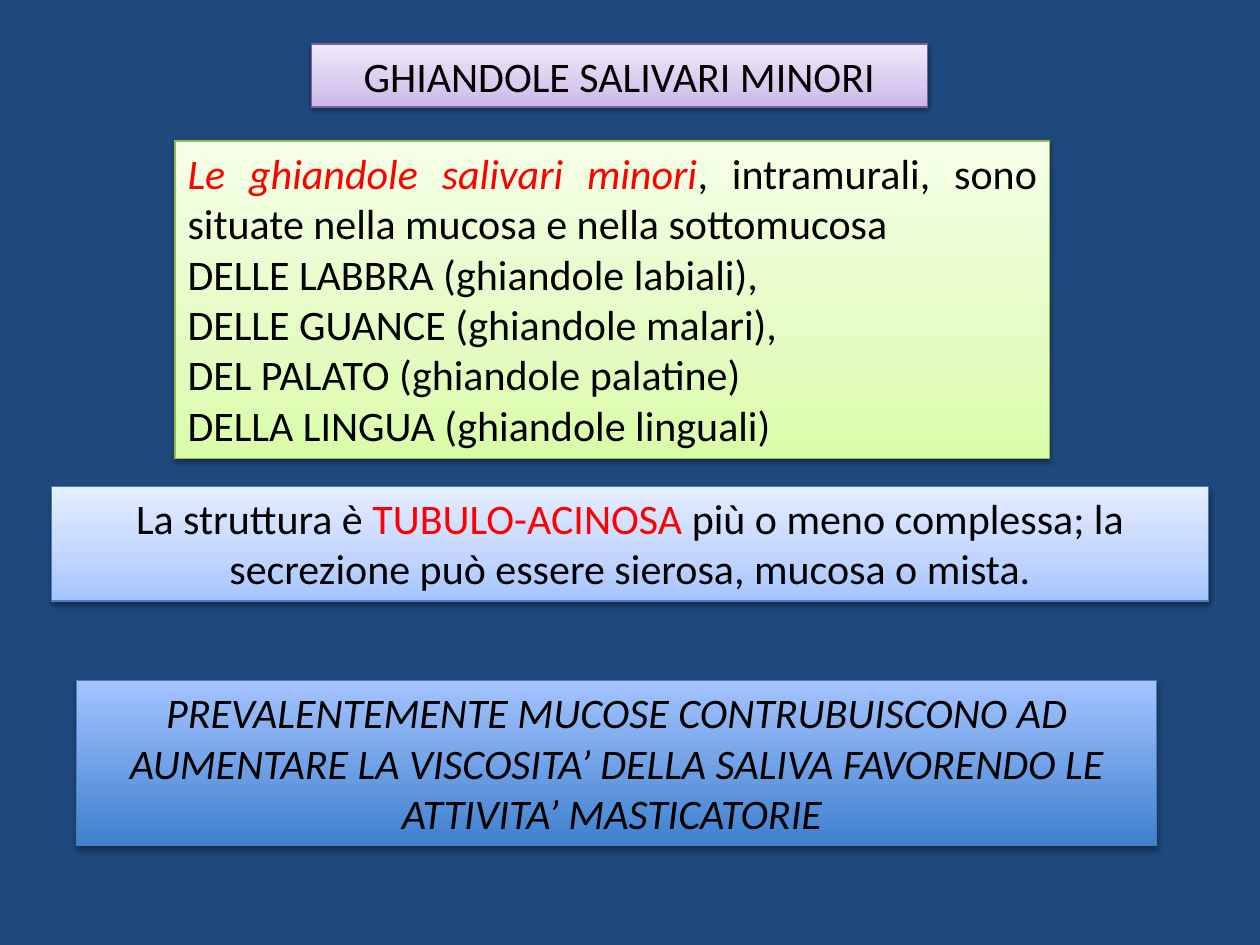
from pptx import Presentation
from pptx.dml.color import RGBColor
from pptx.enum.shapes import MSO_SHAPE
from pptx.enum.text import MSO_ANCHOR, MSO_AUTO_SIZE, PP_ALIGN
from pptx.oxml import parse_xml
from pptx.oxml.ns import nsdecls, qn
from pptx.util import Inches, Pt

BACKGROUND, BLACK, RED = "1F497D", "000000", "FF0000"
PLAIN = {"color": BLACK, "italic": False}
ITALIC = {"color": BLACK, "italic": True}
RED_PLAIN = {"color": RED, "italic": False}
RED_ITALIC = {"color": RED, "italic": True}

# Gradient stops run from the bottom edge to the top edge.
PANELS = [
    {
        "place": (2.47, 0.35, 4.89, 0.5),
        "stops": [(0, "C9B5E8"), (35, "D8CBEE"), (100, "F0EAF9")],
        "line": "7D60A0", "shadow": (38, 1.6), "align": PP_ALIGN.CENTER,
        "paragraphs": [[("GHIANDOLE SALIVARI MINORI", PLAIN)]],
    },
    {
        "place": (1.39, 1.12, 6.94, 2.52),
        "stops": [(0, "DAFDA7"), (35, "E4FCC2"), (100, "F5FFE7")],
        "line": "98B955", "shadow": (38, 1.6), "align": PP_ALIGN.JUSTIFY,
        "paragraphs": [
            [("Le ghiandole salivari minori", RED_ITALIC),
             (", intramurali, sono situate nella mucosa e nella sottomucosa ", PLAIN)],
            [("DELLE LABBRA (ghiandole labiali), ", PLAIN)],
            [("DELLE GUANCE (ghiandole malari), ", PLAIN)],
            [("DEL PALATO (ghiandole palatine) ", PLAIN)],
            [("DELLA LINGUA (ghiandole linguali)", PLAIN)],
        ],
    },
    {
        "place": (0.41, 3.86, 9.18, 0.91),
        "stops": [(0, "A4C4FF"), (35, "BFD4FF"), (100, "E6EEFF")],
        "line": "4B7EBC", "shadow": (38, 1.6), "align": PP_ALIGN.CENTER,
        "paragraphs": [
            [("La struttura è ", PLAIN), ("TUBULO-ACINOSA ", RED_PLAIN),
             ("più o meno complessa; la secrezione può essere sierosa, "
              "mucosa o mista.", PLAIN)],
        ],
    },
    {
        "place": (0.61, 5.4, 8.57, 1.31),
        "stops": [(0, "3F80CE"), (100, "A4C4FF")],
        "line": "4B7EBC", "shadow": (35, 1.8), "align": PP_ALIGN.CENTER,
        "paragraphs": [
            [("PREVALENTEMENTE MUCOSE CONTRUBUISCONO AD AUMENTARE LA VISCOSITA’ "
              "DELLA SALIVA FAVORENDO LE ATTIVITA’ MASTICATORIE ", ITALIC)],
        ],
    },
]


def rgb(color):
    return RGBColor.from_string(color)


def fill_gradient(shape, stops):
    marks = "".join(
        f'<a:gs pos="{percent * 1000}"><a:srgbClr val="{color}"/></a:gs>'
        for percent, color in stops)
    geometry = shape._element.spPr.find(qn("a:prstGeom"))
    geometry.addnext(parse_xml(
        f'<a:gradFill {nsdecls("a")} rotWithShape="1"><a:gsLst>{marks}</a:gsLst>'
        '<a:lin ang="16200000" scaled="0"/></a:gradFill>'))


def drop_shadow(shape, opacity, distance):
    shape.shadow.inherit = False
    effects = shape._element.spPr.find(qn("a:effectLst"))
    effects.append(parse_xml(
        f'<a:outerShdw {nsdecls("a")} blurRad="{Pt(3.1)}" dist="{Pt(distance)}" '
        f'dir="5400000" rotWithShape="0"><a:srgbClr val="{BLACK}">'
        f'<a:alpha val="{opacity * 1000}"/></a:srgbClr></a:outerShdw>'))


def write_text(frame, paragraphs, align):
    frame.word_wrap = True
    frame.auto_size = MSO_AUTO_SIZE.SHAPE_TO_FIT_TEXT
    frame.vertical_anchor = MSO_ANCHOR.TOP
    for index, spans in enumerate(paragraphs):
        para = frame.add_paragraph() if index else frame.paragraphs[0]
        para.alignment = align
        for text, style in spans:
            span = para.add_run()
            span.text = text
            font_values = {"name": "Calibri", "size": Pt(24), "italic": style["italic"]}
            for name, value in font_values.items():
                setattr(span.font, name, value)
            span.font.color.rgb = rgb(style["color"])


def add_panel(page, panel):
    box = page.shapes.add_shape(MSO_SHAPE.RECTANGLE, *map(Inches, panel["place"]))
    fill_gradient(box, panel["stops"])
    box.line.color.rgb = rgb(panel["line"])
    box.line.width = Pt(0.75)
    drop_shadow(box, *panel["shadow"])
    write_text(box.text_frame, panel["paragraphs"], panel["align"])


def main():
    deck = Presentation()
    deck.slide_width, deck.slide_height = Inches(10), Inches(7.5)
    page = deck.slides.add_slide(deck.slide_layouts[6])
    page.background.fill.solid()
    page.background.fill.fore_color.rgb = rgb(BACKGROUND)
    for panel in PANELS:
        add_panel(page, panel)
    deck.save("out.pptx")


if __name__ == "__main__":
    main()
